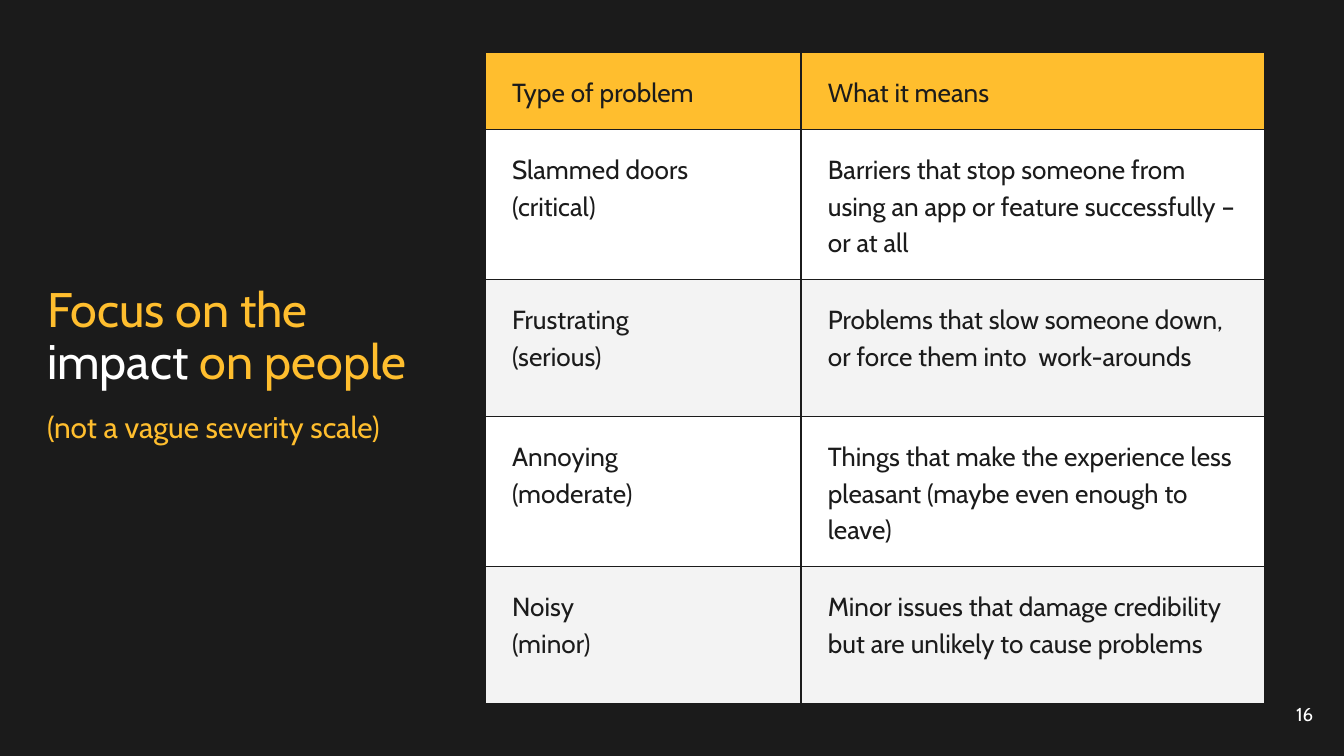
"""Build the slide on problem types and their impact on people."""
from dataclasses import dataclass
from typing import NamedTuple

from lxml.etree import SubElement
from pptx import Presentation
from pptx.dml.color import RGBColor as Rgb
from pptx.enum.text import MSO_ANCHOR as Anchor, MSO_AUTO_SIZE as Fit, PP_ALIGN as Align
from pptx.oxml.ns import qn
from pptx.util import Inches, Pt


@dataclass(frozen=True)
class Theme:
    font: str = "Cabin"
    dark: str = "1B1B1B"
    gold: str = "FFBE2E"
    white: str = "FFFFFF"
    gray: str = "F3F3F3"
    title: int = 26
    sub: int = 16
    body: int = 14
    page: int = 10
    rule: float = 0.75


class Row(NamedTuple):
    kind: str
    sense: str


class Box(NamedTuple):
    left: float
    top: float
    width: float
    height: float


THEME = Theme()
WIDTH = 10
HEIGHT = WIDTH * 9 / 16
HEAD = Row("Type of problem", "What it means")
ROWS = [
    Row("Slammed doors\v(critical)",
        "Barriers that stop someone from using an app or feature successfully – or at all"),
    Row("Frustrating\v(serious)",
        "Problems that slow someone down, or force them into  work-arounds"),
    Row("Annoying\v(moderate)",
        "Things that make the experience less pleasant (maybe even enough to leave)"),
    Row("Noisy\v(minor)",
        "Minor issues that damage credibility but are unlikely to cause problems"),
]
COLS = (2.35, 3.45)
HEAD_H, ROW_H = 0.51, 1.02


def place(shape, box: Box) -> None:
    shape.left, shape.top, shape.width, shape.height = map(Inches, box)


def style(para, size: int, color: str, space: float, align=Align.LEFT) -> None:
    para.alignment, para.line_spacing = align, space
    para.space_before = Pt(0)
    for run in para.runs:
        run.font.name, run.font.size = THEME.font, Pt(size)
        run.font.color.rgb = Rgb.from_string(color)
    for gap in para._p.findall(qn("a:br")):
        prop = SubElement(gap, qn("a:rPr"), sz=str(size * 100))
        SubElement(prop, qn("a:latin"), typeface=THEME.font)


def edge(cell) -> None:
    prop = cell._tc.get_or_add_tcPr()
    for side in "LRTB":
        line = SubElement(prop, qn(f"a:ln{side}"), w=str(Pt(THEME.rule)))
        fill = SubElement(line, qn("a:solidFill"))
        SubElement(fill, qn("a:srgbClr"), val=THEME.dark)


def draw_cell(cell, text: str, fill: str, anchor) -> None:
    cell.text_frame.text = text
    cell.vertical_anchor = anchor
    cell.margin_left = cell.margin_right = Inches(0.2)
    cell.margin_top = cell.margin_bottom = Inches(0.15)
    edge(cell)
    cell.fill.solid()
    cell.fill.fore_color.rgb = Rgb.from_string(fill)
    style(cell.text_frame.paragraphs[0], THEME.body, THEME.dark, 1.15)


def draw_table(slide, box: Box) -> None:
    rows = [HEAD, *ROWS]
    table = slide.shapes.add_table(len(rows), len(COLS), *map(Inches, box)).table
    table.horz_banding = False
    for col, width in zip(table.columns, COLS):
        col.width = Inches(width)
    for r, row in enumerate(rows):
        table.rows[r].height = Inches(ROW_H if r else HEAD_H)
        fill = (THEME.white if r % 2 else THEME.gray) if r else THEME.gold
        anchor = Anchor.TOP if r else Anchor.MIDDLE
        for c, text in enumerate(row):
            draw_cell(table.cell(r, c), text, fill, anchor)


def draw_title(slide, box: Box) -> None:
    title = slide.shapes.title
    place(title, box)
    frame = title.text_frame
    frame.auto_size, frame.word_wrap = Fit.NONE, True
    frame.vertical_anchor = Anchor.BOTTOM
    frame.text = "Focus on the \v\n(not a vague severity scale)"
    main, sub = frame.paragraphs
    for text in ("impact", " on people"):
        main.add_run().text = text
    style(main, THEME.title, THEME.gold, 0.9)
    main.runs[1].font.color.rgb = Rgb.from_string(THEME.white)
    style(sub, THEME.sub, THEME.gold, 1.0)
    sub.space_before = Pt(10)


def draw_page(slide, box: Box) -> None:
    frame = slide.shapes.add_textbox(*map(Inches, box)).text_frame
    frame.word_wrap, frame.vertical_anchor = True, Anchor.MIDDLE
    frame.margin_top = frame.margin_bottom = Inches(0.1)
    frame.text = "16"
    style(frame.paragraphs[0], THEME.page, THEME.white, 1.0, Align.RIGHT)


def main() -> None:
    deck = Presentation()
    deck.slide_width, deck.slide_height = Inches(WIDTH), Inches(HEIGHT)
    slide = deck.slides.add_slide(deck.slide_layouts[5])
    back = slide.background.fill
    back.solid()
    back.fore_color.rgb = Rgb.from_string(THEME.dark)
    draw_title(slide, Box(0.25, 1.83, 3.44, 1.53))
    draw_table(slide, Box(3.61, 0.39, sum(COLS), HEAD_H + ROW_H * len(ROWS)))
    draw_page(slide, Box(9.27, 5.1, 0.6, 0.43))
    deck.save("out.pptx")


if __name__ == "__main__":
    main()
